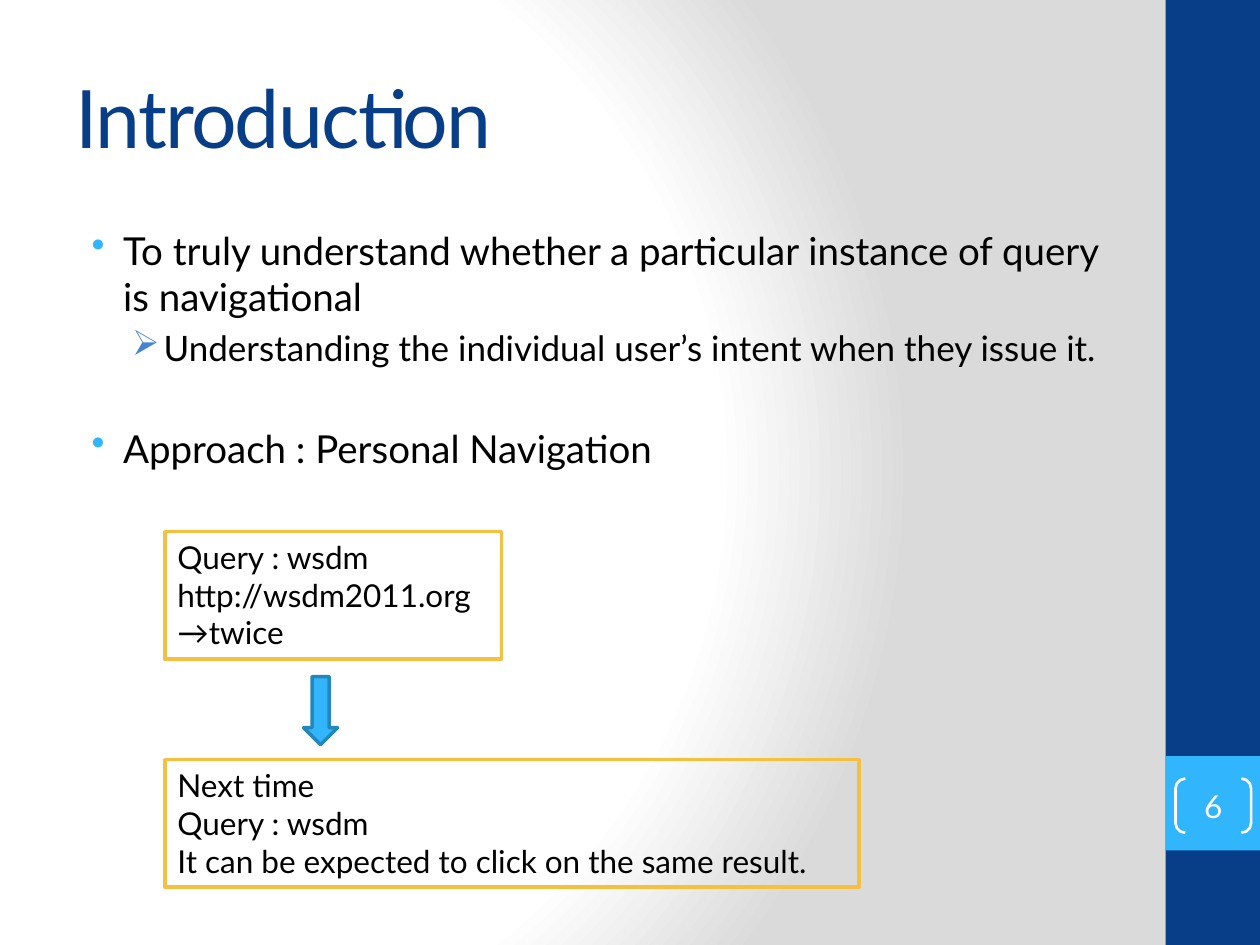
import pptx
import pptx.dml.color
import pptx.enum.shapes
import pptx.enum.text
import pptx.oxml
import pptx.oxml.ns
import pptx.util

# Content
TITLE = ["Introduction"]
BODY = [  # level, space before in points, text
    (0, 4.4, "To truly understand whether a particular instance of query is navigational"),
    (1, 4, "Understanding the individual user’s intent when they issue it."),
    (0, 32.4, "Approach : Personal Navigation"),
]
FIRST = ["Query : wsdm", "http://wsdm2011.org\v→twice"]
NEXT = ["Next time", "Query : wsdm", "It can be expected to click on the same result."]
NUMBER = ["6"]

THEME = {
    "font": "Lato", "title": 46, "number": 18, "box": 18,
    "navy": "073E87", "sky": "31B6FD", "edge": "2487BB", "gold": "F5C040",
    "ink": "000000", "white": "FFFFFF", "grey": "DADADA",
    # level: type size, bullet, bullet colour, left margin in inches
    "levels": [(22, "•", "31B6FD", 0.38), (20, "➢", "4584D3", 0.7)],
    "hang": 0.25,
}

# Places as percent of the slide: left, top, width, height
WIDE, HIGH = 10, 7.5
SIDE, BAND = 92.5, 7.5
LEFT, TALL = 13.1, 13.47
PLACE = {
    "bar": (SIDE, 0, BAND, 100),
    "tab": (SIDE, 80, BAND, 10),
    "number": (93.3, 82.4, 6, 5.73),
    "title": (5, 4, 83.3, 16.67),
    "body": (5, 23.33, 83.3, 70),
    "first": (LEFT, 56.27, 26.7, TALL),
    "next": (LEFT, 80.4, 55.1, TALL),
    "arrow": (24.1, 71.6, 2.7, 7.2),
}

Inch, Pt = pptx.util.Inches, pptx.util.Pt
KIND = pptx.enum.shapes.MSO_SHAPE
ANCHOR = pptx.enum.text.MSO_ANCHOR
ALIGN = pptx.enum.text.PP_ALIGN


def color(name):
    return pptx.dml.color.RGBColor.from_string(THEME.get(name, name))


def spot(name):
    x, y, w, h = PLACE[name]
    return [Inch(v / 100 * size) for v, size in ((x, WIDE), (y, HIGH), (w, WIDE), (h, HIGH))]


def shape(slide, kind, name, fill=None, line=None, width=2):
    item = slide.shapes.add_shape(kind, *spot(name))
    item.shadow.inherit = False
    if fill:
        item.fill.solid()
        item.fill.fore_color.rgb = color(fill)
    else:
        item.fill.background()
    if line:
        item.line.color.rgb = color(line)
        item.line.width = Pt(width)
    else:
        item.line.fill.background()
    return item


def write(item, lines, size, ink="ink", anchor=ANCHOR.TOP, align=ALIGN.LEFT, inset=None, track=0):
    frame = item.text_frame
    frame.word_wrap = True
    frame.vertical_anchor = anchor
    if inset is not None:
        frame.margin_left = frame.margin_right = inset
        frame.margin_top = frame.margin_bottom = inset
    for i, line in enumerate(lines):
        para = frame.add_paragraph() if i else frame.paragraphs[0]
        para.text = line
        para.alignment = align
        for run in para.runs:
            run.font.name = THEME["font"]
            run.font.size = Pt(size)
            run.font.color.rgb = color(ink)
            if track:
                run.font._element.set("spc", str(track * 100))
    return frame.paragraphs


def bullet(para, level, before):
    size, mark, tint, left = THEME["levels"][level]
    para.level = level
    para.space_before = Pt(before)
    para.runs[0].font.size = Pt(size)
    props = para._p.get_or_add_pPr()
    props.set("marL", str(Inch(left)))
    props.set("indent", str(-Inch(THEME["hang"])))
    space = pptx.oxml.ns.nsdecls("a")
    for part in (f'<a:buClr {space}><a:srgbClr val="{tint}"/></a:buClr>',
                 f'<a:buChar {space} char="{mark}"/>'):
        props.append(pptx.oxml.parse_xml(part))


def backdrop(slide):
    stops = "".join(
        f'<a:gs pos="{at * 1000}"><a:srgbClr val="{THEME[name]}"/></a:gs>'
        for at, name in ((0, "white"), (75, "white"), (100, "grey")))
    slide._element.cSld.insert(0, pptx.oxml.parse_xml(
        f'<p:bg {pptx.oxml.ns.nsdecls("p", "a")}><p:bgPr><a:gradFill rotWithShape="1">'
        f'<a:gsLst>{stops}</a:gsLst><a:path path="circle">'
        '<a:fillToRect l="20000" t="50000" r="100000" b="50000"/></a:path>'
        '</a:gradFill><a:effectLst/></p:bgPr></p:bg>'))


def main():
    deck = pptx.Presentation()
    deck.slide_width, deck.slide_height = Inch(WIDE), Inch(HIGH)
    slide = deck.slides.add_slide(deck.slide_layouts[6])
    backdrop(slide)

    # Side bar
    shape(slide, KIND.RECTANGLE, "bar", fill="navy")
    shape(slide, KIND.RECTANGLE, "tab", fill="sky")

    # Title and bullets
    write(slide.shapes.add_textbox(*spot("title")), TITLE, THEME["title"],
          ink="navy", anchor=ANCHOR.MIDDLE, track=-1)
    paras = write(slide.shapes.add_textbox(*spot("body")),
                  [text for _, _, text in BODY], THEME["levels"][0][0])
    for para, (level, before, _) in zip(paras, BODY):
        bullet(para, level, before)

    # Slide number
    pair = shape(slide, KIND.DOUBLE_BRACKET, "number", line="white", width=1.5)
    pair.adjustments[0] = 0.18
    write(pair, NUMBER, THEME["number"], ink="white",
          anchor=ANCHOR.MIDDLE, align=ALIGN.CENTER, inset=0)

    # Query boxes and the arrow between them
    for name, lines in (("first", FIRST), ("next", NEXT)):
        write(shape(slide, KIND.RECTANGLE, name, line="gold"), lines, THEME["box"])
    shape(slide, KIND.DOWN_ARROW, "arrow", fill="sky", line="edge")

    deck.save("out.pptx")


if __name__ == "__main__":
    main()
